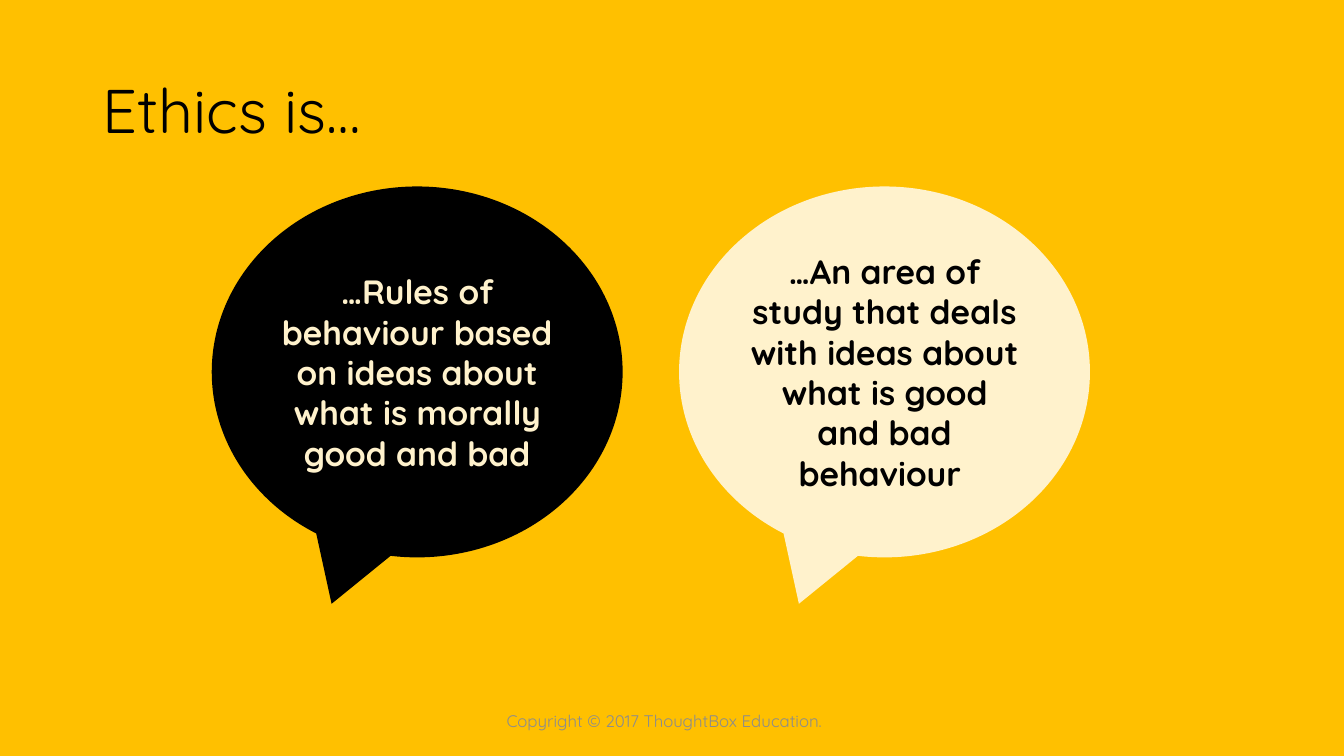
from pptx import Presentation
from pptx import util as u
from pptx.dml import color
from pptx.enum import shapes, text

COLORS = {"gold": "FFC000", "black": "000000", "cream": "FFF2CC", "grey": "8C8C8C"}
FONT = "Quicksand"


def rgb(name):
    """Return the named palette colour."""
    return color.RGBColor.from_string(COLORS[name])


def write(sp, words, size, ink, align, bold=False):
    """Set one vertically centred paragraph in a shape."""
    tf = sp.text_frame
    tf.word_wrap = True
    tf.vertical_anchor = text.MSO_ANCHOR.MIDDLE
    p = tf.paragraphs[0]
    p.text = words
    p.alignment = align
    f = p.runs[0].font
    f.name, f.size, f.bold = FONT, u.Pt(size), bold
    f.color.rgb = rgb(ink)
    return p


def add_label(s, box, words, size, ink, align):
    """Add a text box filling the given box in inches."""
    sp = s.shapes.add_textbox(*map(u.Inches, box))
    return write(sp, words, size, ink, align)


def add_bubbles(s, box, gap, bubbles):
    """Share the box between equal speech bubbles separated by a gap."""
    left, top, width, height = box
    w = (width - gap * (len(bubbles) - 1)) / len(bubbles)
    for i, (words, fill, ink) in enumerate(bubbles):
        place = (left + i * (w + gap), top, w, height)
        sp = s.shapes.add_shape(
            shapes.MSO_SHAPE.OVAL_CALLOUT, *map(u.Inches, place))
        sp.shadow.inherit = False
        sp.fill.solid()
        sp.fill.fore_color.rgb = rgb(fill)
        sp.line.fill.background()
        write(sp, words, 24, ink, text.PP_ALIGN.CENTER, bold=True)


def build_slide(prs):
    """Build the ethics definition slide."""
    s = prs.slides.add_slide(prs.slide_layouts[6])
    s.background.fill.solid()
    s.background.fill.fore_color.rgb = rgb("gold")
    title = add_label(s, (0.92, 0.4, 11.5, 1.45), "Ethics is…", 44, "black",
                      text.PP_ALIGN.LEFT)
    title.line_spacing = 0.9
    add_label(s, (4.34, 6.95, 4.5, 0.4), "Copyright © 2017 ThoughtBox Education.",
              12, "grey", text.PP_ALIGN.CENTER)
    add_bubbles(s, (2.1, 1.85, 8.71, 3.68), 0.56, [
        ("…Rules of behaviour based on ideas about what is morally good and bad",
         "black", "cream"),
        ("…An area of study that deals with ideas about what is good and bad behaviour ",
         "cream", "black"),
    ])


def main():
    """Create and save the presentation."""
    prs = Presentation()
    prs.slide_width, prs.slide_height = u.Inches(13.33), u.Inches(7.5)
    build_slide(prs)
    prs.save("out.pptx")


if __name__ == "__main__":
    main()
